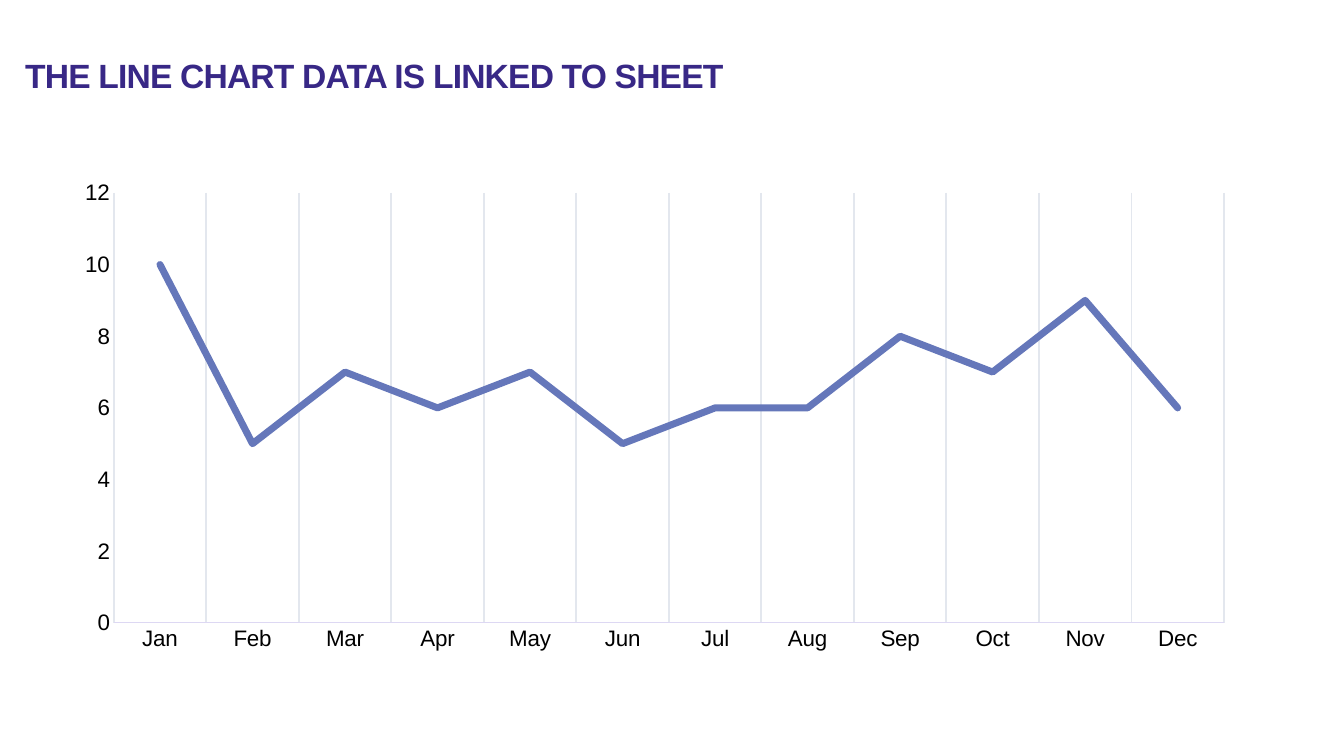
from lxml import etree
from pptx import Presentation
from pptx.chart.data import CategoryChartData
from pptx.dml.color import RGBColor
from pptx.enum.chart import XL_CHART_TYPE, XL_TICK_MARK
from pptx.enum.text import MSO_ANCHOR
from pptx.oxml.ns import qn
from pptx.util import Pt

LINE_CHART = XL_CHART_TYPE.LINE
NO_TICK = XL_TICK_MARK.NONE
TOP = MSO_ANCHOR.TOP
FONT = "Arial"
MONTHS = ["Jan", "Feb", "Mar", "Apr", "May", "Jun",
          "Jul", "Aug", "Sep", "Oct", "Nov", "Dec"]
MONTHLY_VALUES = [10, 5, 7, 6, 7, 5, 6, 6, 8, 7, 9, 6]
PLOT_BOX = {"x": 0.044, "y": 0.044, "w": 0.935, "h": 0.878}


def color(hex_string):
    """Turn a hex string into a colour."""
    return RGBColor.from_string(hex_string)


def style_font(font, size, hex_string, bold=False):
    """Set the typeface, size, colour and weight of a font."""
    font.name = FONT
    font.size = Pt(size)
    font.bold = bold
    font.color.rgb = color(hex_string)


def style_line(line, hex_string, width):
    """Set the colour and width of a line."""
    line.color.rgb = color(hex_string)
    line.width = Pt(width)


def add_heading(slide, left, top, width, height):
    """Place the slide heading in the given box."""
    heading = slide.shapes.add_textbox(Pt(left), Pt(top), Pt(width), Pt(height))
    frame = heading.text_frame
    frame.word_wrap = True
    frame.vertical_anchor = TOP
    frame.margin_left = frame.margin_top = frame.margin_right = 0
    frame.margin_bottom = Pt(3.6)
    frame.text = "THE LINE CHART DATA IS LINKED TO SHEET"
    paragraph = frame.paragraphs[0]
    paragraph.line_spacing = 0.9
    style_font(paragraph.runs[0].font, 24, "382886", bold=True)
    for properties in heading.element.iter(qn("a:rPr")):
        properties.set("spc", "-60")


def fix_plot_area(chart):
    """Pin the inner plot area to its share of the chart box."""
    plot_area = chart.element.find(".//" + qn("c:plotArea"))
    layout = plot_area.find(qn("c:layout"))
    if layout is None:
        layout = etree.Element(qn("c:layout"))
        plot_area.insert(0, layout)
    manual = etree.SubElement(layout, qn("c:manualLayout"))
    settings = {"layoutTarget": "inner", "xMode": "edge", "yMode": "edge", **PLOT_BOX}
    for tag, value in settings.items():
        etree.SubElement(manual, qn("c:" + tag)).set("val", str(value))


def add_monthly_chart(slide, left, top, width, height):
    """Place the monthly line chart in the given box."""
    data = CategoryChartData()
    data.categories = MONTHS
    data.add_series("Series 1", MONTHLY_VALUES)
    chart = slide.shapes.add_chart(
        LINE_CHART, Pt(left), Pt(top), Pt(width), Pt(height), data).chart
    chart.has_legend = False
    chart.has_title = False
    style_font(chart.font, 16, "000000")

    months, values = chart.category_axis, chart.value_axis
    for axis in (months, values):
        axis.major_tick_mark = axis.minor_tick_mark = NO_TICK
        style_font(axis.tick_labels.font, 16, "000000")
    months.has_major_gridlines = True
    style_line(months.major_gridlines.format.line, "E3E7EE", 1.25)
    style_line(months.format.line, "DDD8F3", 0.75)
    values.has_major_gridlines = False
    values.format.line.fill.background()
    values.minimum_scale, values.maximum_scale, values.major_unit = 0, 12, 2

    plot = chart.plots[0]
    plot.vary_by_categories = False
    trend = plot.series[0]
    trend.smooth = False
    style_line(trend.format.line, "6577BA", 5)
    outline = chart.element.find(".//" + qn("c:ser")).find(".//" + qn("a:ln"))
    outline.set("cap", "rnd")
    etree.SubElement(outline, qn("a:round"))
    fix_plot_area(chart)


def main():
    """Build the slide and save it."""
    deck = Presentation()
    deck.slide_width, deck.slide_height = Pt(960), Pt(540)
    slide = deck.slides.add_slide(deck.slide_layouts[6])
    slide.background.fill.solid()
    slide.background.fill.fore_color.rgb = color("FFFFFF")
    add_heading(slide, 18, 42.5, 828, 67.7)
    add_monthly_chart(slide, 43.9, 122.4, 848.2, 349.9)
    deck.save("out.pptx")


if __name__ == "__main__":
    main()
